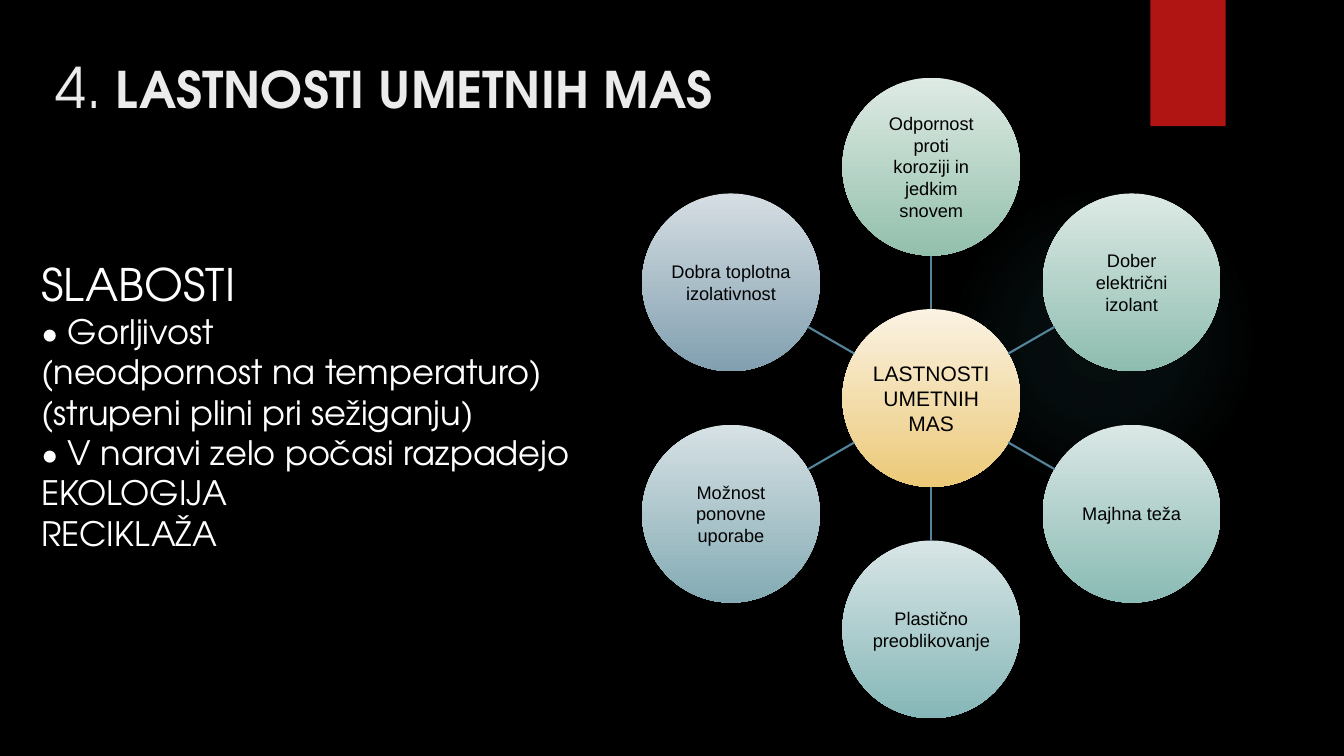
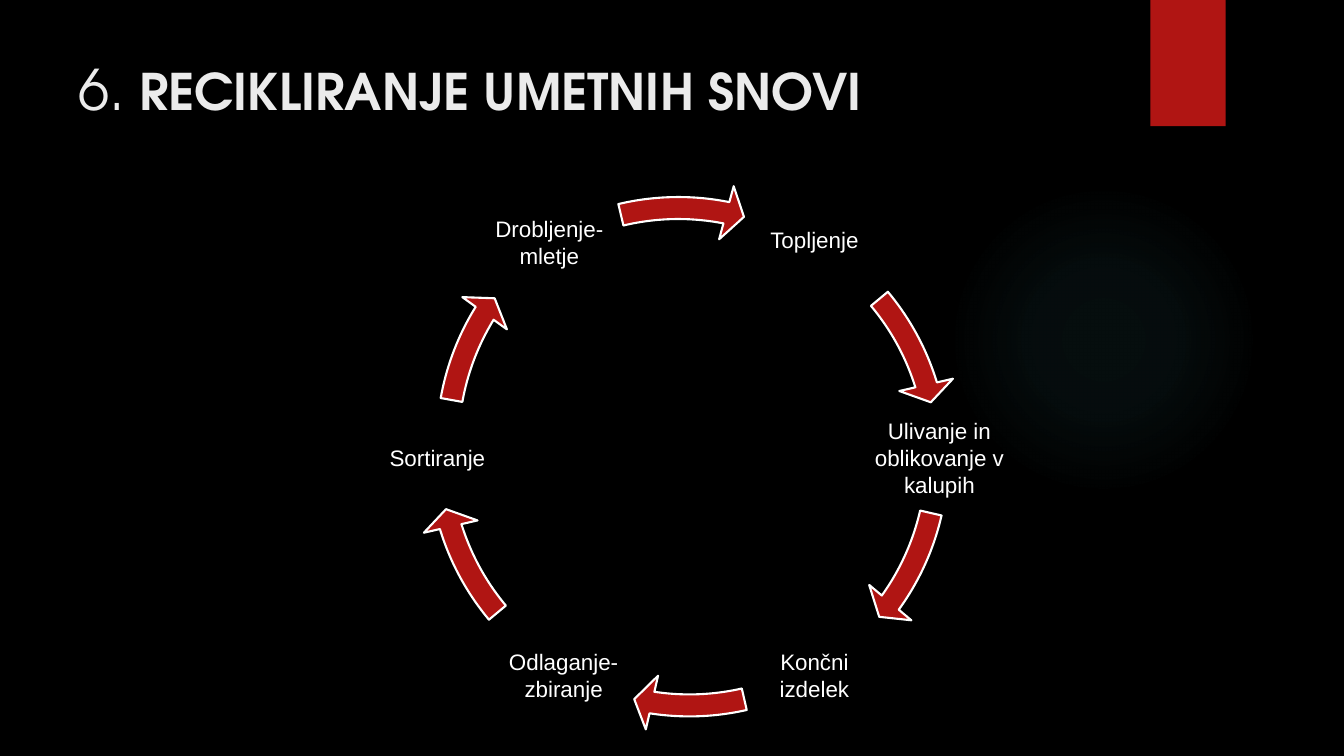
from math import cos, radians, sin

from lxml import etree
from pptx import Presentation
from pptx.dml.color import RGBColor as Rgb
from pptx.enum.shapes import MSO_CONNECTOR as Line, MSO_SHAPE as Shape
from pptx.enum.text import MSO_ANCHOR as Anchor, PP_ALIGN as Align
from pptx.oxml import parse_xml
from pptx.oxml.ns import nsdecls, qn
from pptx.util import Cm, Pt

COLORS = {
    "background": "000000", "accent": "B01513", "glow": "50B9C1",
    "title": "EBEBEB", "light": "FFFFFF", "dark": "000000", "spoke": "54849A",
}
DISPLAY, PLAIN = "TeX Gyre Adventor", "Arial"

deck = Presentation()
deck.slide_width, deck.slide_height = Cm(33.87), Cm(19.05)
master_fill = deck.slide_master.background.fill
master_fill.solid()
master_fill.fore_color.rgb = Rgb.from_string(COLORS["background"])


def write_text(box, text, size, color, font=PLAIN, align=Align.CENTER, inset=0.03):
    frame = box.text_frame
    frame.word_wrap = True
    frame.vertical_anchor = Anchor.MIDDLE
    frame.margin_left = frame.margin_right = Cm(inset)
    frame.margin_top = frame.margin_bottom = Cm(inset)
    frame.text = text
    for para in frame.paragraphs:
        para.alignment = align
        for span in para.runs:
            span.font.size, span.font.name = Pt(size), font
            span.font.color.rgb = Rgb.from_string(COLORS[color])


def add_page(number, title, left, top):
    page = deck.slides.add_slide(deck.slide_layouts[6])

    # Soft round glow
    glow = page.shapes.add_shape(Shape.OVAL, Cm(23.9), Cm(4.65), Cm(7.82), Cm(7.82))
    glow.shadow.inherit = False
    glow.line.fill.background()
    glow.fill.gradient()
    stops = "".join(
        f'<a:gs pos="{place}000"><a:srgbClr val="{COLORS["glow"]}">'
        f'<a:alpha val="{alpha}000"/></a:srgbClr></a:gs>'
        for place, alpha in [(0, 7), (36, 6), (69, 0)])
    old_fill = glow._element.spPr.find(qn("a:gradFill"))
    old_fill.getparent().replace(old_fill, parse_xml(
        f'<a:gradFill {nsdecls("a")}><a:gsLst>{stops}</a:gsLst><a:path path="circle">'
        '<a:fillToRect l="50000" t="50000" r="50000" b="50000"/></a:path></a:gradFill>'))

    # Red tab at the top edge
    tab = page.shapes.add_shape(Shape.RECTANGLE, Cm(28.99), 0, Cm(1.9), Cm(3.18))
    tab.shadow.inherit = False
    tab.fill.solid()
    tab.fill.fore_color.rgb = Rgb.from_string(COLORS["accent"])
    tab.line.fill.background()

    # Title with a light number and bold words
    box = page.shapes.add_textbox(Cm(left), Cm(top), Cm(31.45), Cm(2.31))
    write_text(box, number, 40, "title", DISPLAY, Align.LEFT, 0.2)
    box.text_frame.vertical_anchor = Anchor.BOTTOM
    span = box.text_frame.paragraphs[0].add_run()
    span.text = " " + title
    span.font.size, span.font.name, span.font.bold = Pt(36), DISPLAY, True
    span.font.color.rgb = Rgb.from_string(COLORS["title"])
    return page


# Properties: a hub with six circles around it
page = add_page("4.", "LASTNOSTI UMETNIH MAS", 1.19, 0.91)
hub_x, hub_y, orbit, diameter = 23.47, 10.03, 5.83, 4.48
# Text, size, top colour, bottom colour, angle from the hub, distance from the hub
circles = [("LASTNOSTI UMETNIH MAS", 15, "FAF2E3", "ECC977", 0, 0)]
properties = [
    ("Odpornost proti\nkoroziji in jedkim\nsnovem", "DEEAE4", "93C0AC"),
    ("Dober električni\nizolant", "DCE9E4", "8EBDB0"),
    ("Majhna teža", "DAE7E5", "8ABBB4"),
    ("Plastično preoblikovanje", "D8E5E6", "86B7B8"),
    ("Možnost ponovne uporabe", "D6E1E4", "84ABB4"),
    ("Dobra toplotna izolativnost", "D5DDE2", "81A0B0"),
]
for index, (text, upper, lower) in enumerate(properties):
    circles.append((text, 13, upper, lower, radians(60 * index - 90), orbit))

for text, size, upper, lower, angle, distance in circles:
    x, y = hub_x + distance * cos(angle), hub_y + distance * sin(angle)
    circle = page.shapes.add_shape(Shape.OVAL, Cm(x - diameter / 2), Cm(y - diameter / 2),
                                   Cm(diameter), Cm(diameter))
    circle.shadow.inherit = False
    circle.line.fill.background()
    circle.fill.gradient()
    circle.fill.gradient_angle = 270
    for stop, place, color in zip(circle.fill.gradient_stops, (0, 1), (upper, lower)):
        stop.position = place
        stop.color.rgb = Rgb.from_string(color)
    write_text(circle, text, size, "dark")
    if distance:
        near, far = diameter / 2, distance - diameter / 2
        spoke = page.shapes.add_connector(
            Line.STRAIGHT,
            Cm(hub_x + near * cos(angle)), Cm(hub_y + near * sin(angle)),
            Cm(hub_x + far * cos(angle)), Cm(hub_y + far * sin(angle)))
        spoke.line.color.rgb = Rgb.from_string(COLORS["spoke"])
        spoke.line.width = Pt(1.5)
        etree.SubElement(spoke._element.spPr, qn("a:effectLst"))

# Weaknesses
weaknesses = page.shapes.add_textbox(Cm(0.79), Cm(6.32), Cm(16.94), Cm(7.77))
write_text(weaknesses, "SLABOSTI\n• Gorljivost\n(neodpornost na temperaturo)\n"
           "(strupeni plini pri sežiganju)\n• V naravi zelo počasi razpadejo\n"
           "EKOLOGIJA\nRECIKLAŽA", 24, "light", DISPLAY, Align.LEFT, 0.25)
weaknesses.text_frame.paragraphs[0].runs[0].font.size = Pt(32)

# Recycling: six steps in a ring
page = add_page("6.", "RECIKLIRANJE UMETNIH SNOVI", 1.78, 0.97)
# Text, label left and top, arrow left and top, arrow start and end in degrees
steps = [
    ("Topljenje", 18.77, 4.62, 10.44, 4.6, 320.1, 342.9),
    ("Ulivanje in\noblikovanje v kalupih", 21.92, 10.11, 10.44, 4.6, 12.9, 35.8),
    ("Končni izdelek", 18.77, 15.6, 10.44, 4.6, 77.2, 98.7),
    ("Odlaganje-\nzbiranje", 12.45, 15.6, 10.39, 4.5, 140.1, 162.9),
    ("Sortiranje", 9.27, 10.11, 10.59, 4.24, 190.1, 211.7),
    ("Drobljenje-\nmletje", 12.09, 4.67, 10.16, 4.55, 256.6, 281.2),
]
DEGREE = 0.6  # one degree in adjustment units
for text, left, top, arrow_left, arrow_top, start, end in steps:
    label = page.shapes.add_textbox(Cm(left), Cm(top), Cm(3.51), Cm(2.84))
    write_text(label, text, 16, "light", inset=0.05)
    arrow = page.shapes.add_shape(Shape.CIRCULAR_ARROW, Cm(arrow_left), Cm(arrow_top),
                                  Cm(13.87), Cm(13.87))
    arrow.shadow.inherit = False
    for index, value in enumerate((0.04, 4.17 * DEGREE, end * DEGREE, start * DEGREE, 0.05)):
        arrow.adjustments[index] = value
    arrow.fill.solid()
    arrow.fill.fore_color.rgb = Rgb.from_string(COLORS["accent"])
    arrow.line.color.rgb = Rgb.from_string(COLORS["light"])
    arrow.line.width = Pt(1.5)

deck.save("out.pptx")
